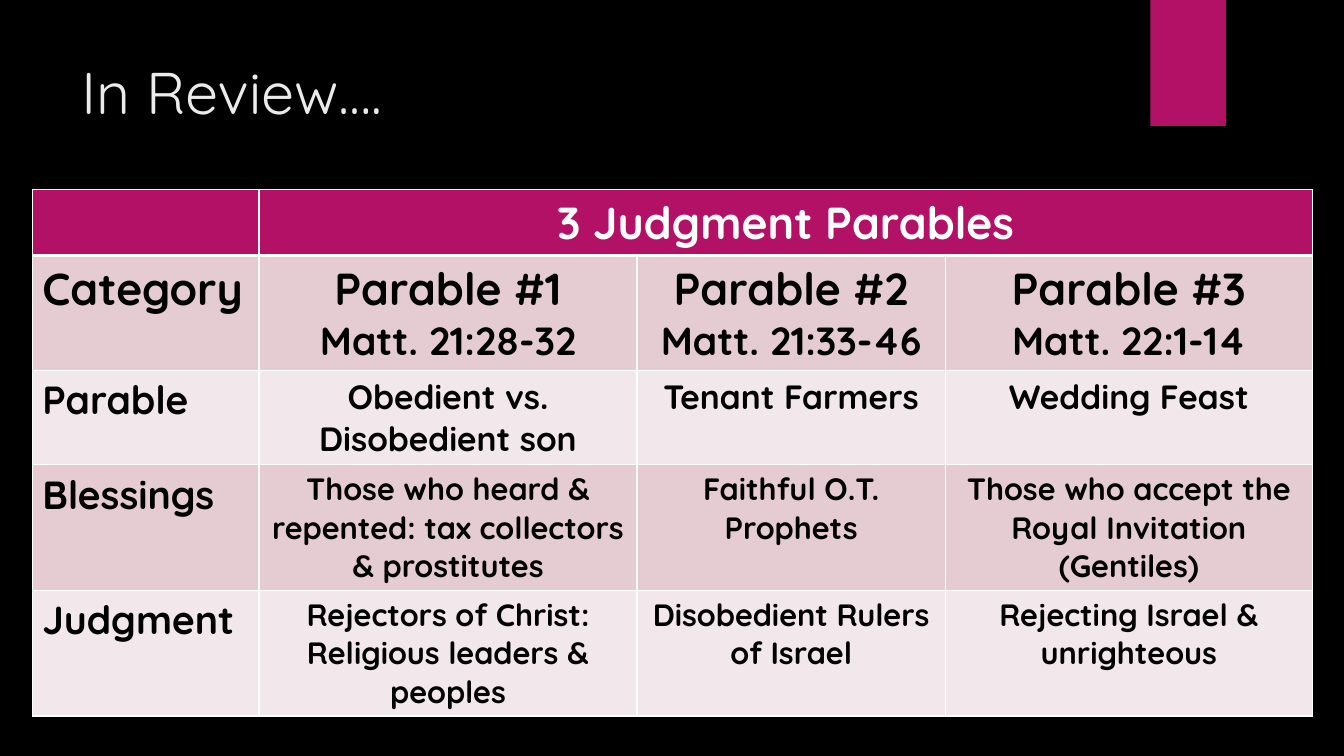
from dataclasses import dataclass

from lxml.etree import SubElement
from pptx import Presentation
from pptx.dml.color import RGBColor
from pptx.enum.shapes import MSO_SHAPE as Preset
from pptx.enum.text import MSO_ANCHOR as Anchor, MSO_AUTO_SIZE as AutoSize, PP_ALIGN as Align
from pptx.oxml.ns import qn
from pptx.util import Pt

FONT = "Quicksand"
MAGENTA, WHITE, BLACK = "B31166", "FFFFFF", "000000"
BANDS = ("E5CCD3", "F2E7EA")
COLUMN_WIDTHS = (162, 270, 220.3, 262.1)
ROW_HEIGHTS = (47.2, 82.2, 67.2, 89.7, 89.7)


@dataclass
class Category:
    name: str
    name_size: float
    sizes: tuple[float, ...]
    entries: tuple[tuple[str, ...], ...]


CATEGORIES = (
    Category("Category", 32, (32, 28), (
        ("Parable #1", "Matt. 21:28-32"),
        ("Parable #2", "Matt. 21:33-46"),
        ("Parable #3", "Matt. 22:1-14"))),
    Category("Parable", 28, (24,), (
        ("Obedient vs. Disobedient son",),
        ("Tenant Farmers",),
        ("Wedding Feast",))),
    Category("Blessings", 28, (22,), (
        ("Those who heard & repented: tax collectors & prostitutes",),
        ("Faithful O.T. Prophets",),
        ("Those who accept the Royal Invitation (Gentiles)",))),
    Category("Judgment", 28, (22,), (
        ("Rejectors of Christ: Religious leaders & peoples",),
        ("Disobedient Rulers of Israel",),
        ("Rejecting Israel & unrighteous",))),
)


def paint(fill, color: str) -> None:
    fill.solid()
    fill.fore_color.rgb = RGBColor.from_string(color)


def style(paragraph, size: float, color: str, align: Align, bold: bool) -> None:
    paragraph.alignment = align
    font = paragraph.font
    font.name, font.size, font.bold = FONT, Pt(size), bold
    font.color.rgb = RGBColor.from_string(color)


def border(cell, widths: dict[str, float]) -> None:
    properties = cell._tc.get_or_add_tcPr()
    for side in "LRTB":
        line = SubElement(properties, qn(f"a:ln{side}"), w=str(Pt(widths.get(side, 1))))
        SubElement(SubElement(line, qn("a:solidFill")), qn("a:srgbClr"), val=WHITE)


def write(cell, lines: tuple[str, ...], sizes: tuple[float, ...], color: str, align: Align) -> None:
    cell.text_frame.text = "\n".join(lines)
    for paragraph, size in zip(cell.text_frame.paragraphs, sizes):
        style(paragraph, size, color, align, True)


def add_title(slide) -> None:
    title = slide.shapes.title
    title.left, title.top, title.width, title.height = Pt(51), Pt(36), Pt(741), Pt(110)
    frame = title.text_frame
    frame.text = "In Review…."
    frame.auto_size = AutoSize.NONE
    frame.vertical_anchor = Anchor.TOP
    style(frame.paragraphs[0], 42, "EBEBEB", Align.LEFT, False)


def add_ribbon(slide) -> None:
    ribbon = slide.shapes.add_shape(Preset.RECTANGLE, Pt(821.8), Pt(0), Pt(54), Pt(90))
    ribbon.shadow.inherit = False
    paint(ribbon.fill, MAGENTA)
    ribbon.line.fill.background()


def add_review_table(slide) -> None:
    review = slide.shapes.add_table(
        len(ROW_HEIGHTS), len(COLUMN_WIDTHS), Pt(23), Pt(135.2),
        Pt(sum(COLUMN_WIDTHS)), Pt(sum(ROW_HEIGHTS))).table
    for column, width in zip(review.columns, COLUMN_WIDTHS):
        column.width = Pt(width)
    for row, height in zip(review.rows, ROW_HEIGHTS):
        row.height = Pt(height)

    for index, row in enumerate(review.rows):
        for cell in row.cells:
            border(cell, {"B": 3} if index == 0 else {"T": 3} if index == 1 else {})
            paint(cell.fill, MAGENTA if index == 0 else BANDS[(index - 1) % 2])

    review.cell(0, 1).merge(review.cell(0, 3))
    write(review.cell(0, 1), ("3 Judgment Parables",), (32,), WHITE, Align.CENTER)
    for index, category in enumerate(CATEGORIES, start=1):
        write(review.cell(index, 0), (category.name,), (category.name_size,), BLACK, Align.LEFT)
        for column, lines in enumerate(category.entries, start=1):
            write(review.cell(index, column), lines, category.sizes, BLACK, Align.CENTER)


def main() -> None:
    deck = Presentation()
    deck.slide_width, deck.slide_height = Pt(960), Pt(540)
    slide = deck.slides.add_slide(deck.slide_layouts[5])
    paint(slide.background.fill, BLACK)
    add_ribbon(slide)
    add_title(slide)
    add_review_table(slide)
    deck.save("out.pptx")


if __name__ == "__main__":
    main()
